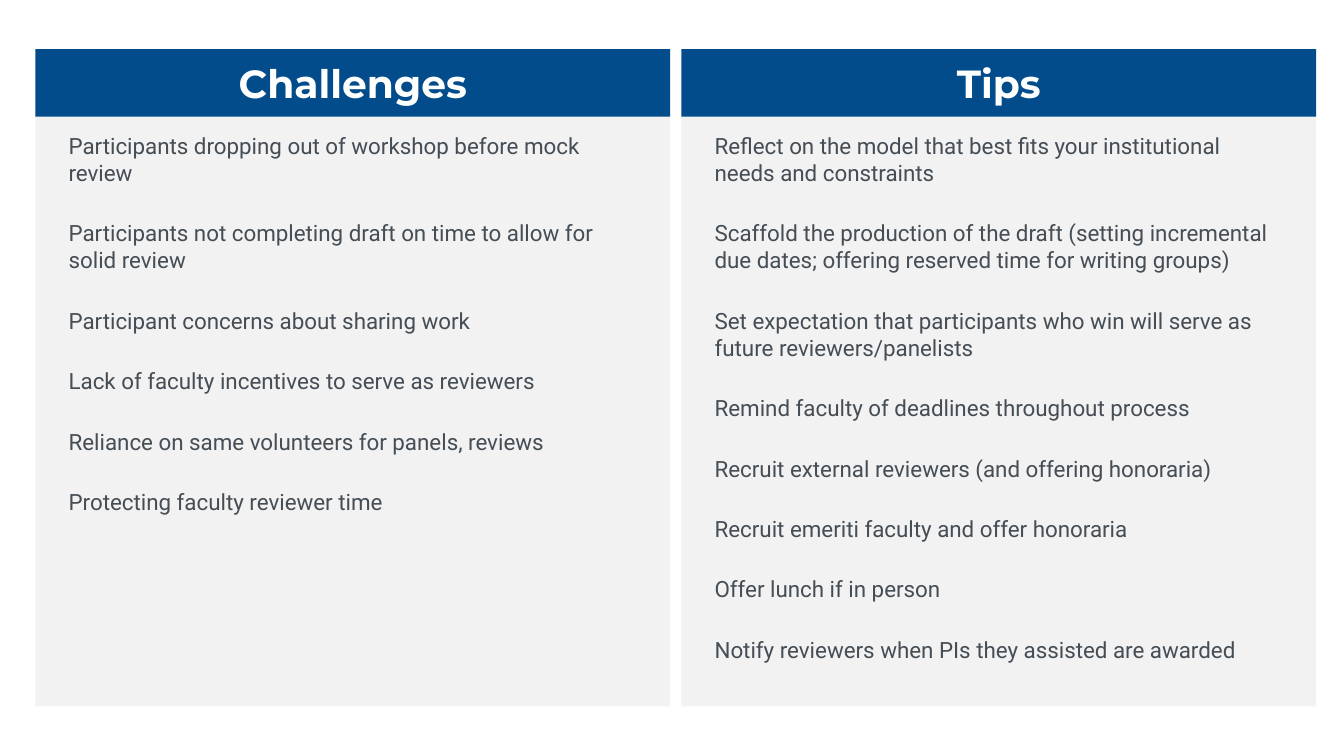
from pptx import Presentation
from pptx.dml.color import RGBColor
from pptx.enum.shapes import MSO_SHAPE
from pptx.enum.text import MSO_ANCHOR, PP_ALIGN
from pptx.util import Cm, Pt

RECTANGLE = MSO_SHAPE.RECTANGLE
TOP, MIDDLE = MSO_ANCHOR.TOP, MSO_ANCHOR.MIDDLE
LEFT, CENTER = PP_ALIGN.LEFT, PP_ALIGN.CENTER

BLUE, LIGHT_GRAY, DARK_GRAY, WHITE = "034C8B", "F2F2F2", "454D55", "FFFFFF"

# Column layout in centimetres
COLUMN_LEFT, COLUMN_TOP = 0.89, 1.24
COLUMN_WIDTH, COLUMN_HEIGHT = 16, 16.56
COLUMN_STEP = 16.28
HEADER_HEIGHT, BODY_OFFSET = 1.7, 1.58

COLUMNS = [
    ("Challenges", [
        "Participants dropping out of workshop before mock review",
        "Participants not completing draft on time to allow for solid review",
        "Participant concerns about sharing work",
        "Lack of faculty incentives to serve as reviewers",
        "Reliance on same volunteers for panels, reviews",
        "Protecting faculty reviewer time",
    ]),
    ("Tips", [
        "Reflect on the model that best fits your institutional needs and constraints",
        "Scaffold the production of the draft (setting incremental due dates; "
        "offering reserved time for writing groups)",
        "Set expectation that participants who win will serve as future reviewers/panelists",
        "Remind faculty of deadlines throughout process",
        "Recruit external reviewers (and offering honoraria)",
        "Recruit emeriti faculty and offer honoraria",
        "Offer lunch if in person",
        "Notify reviewers when PIs they assisted are awarded",
    ]),
]


def color(hex_string):
    return RGBColor.from_string(hex_string)


def add_panel(group, left, top, width, height, fill):
    shape = group.shapes.add_shape(RECTANGLE, Cm(left), Cm(top), Cm(width), Cm(height))
    shape.shadow.inherit = False
    shape.fill.solid()
    shape.fill.fore_color.rgb = color(fill)
    shape.line.fill.background()
    return shape


def write_text(shape, lines, *, font, size, text_color, bold=False, align=LEFT,
               anchor=TOP, inset=(0.25, 0.13), gap=0, indent=0):
    frame = shape.text_frame
    frame.word_wrap = True
    frame.vertical_anchor = anchor
    frame.margin_left = frame.margin_right = Cm(inset[0])
    frame.margin_top = frame.margin_bottom = Cm(inset[1])
    for index, line in enumerate(lines):
        paragraph = frame.add_paragraph() if index else frame.paragraphs[0]
        paragraph.alignment = align
        if index:
            paragraph.space_before = Pt(gap)
        if indent:
            paragraph_format = paragraph._p.get_or_add_pPr()
            paragraph_format.set("marL", str(Cm(indent)))
            paragraph_format.set("indent", "0")
        run = paragraph.add_run()
        run.text = line
        run.font.name = font
        run.font.size = Pt(size)
        run.font.bold = bold
        run.font.color.rgb = color(text_color)


def add_column(slide, left, top, width, height, title, points):
    group = slide.shapes.add_group_shape()
    # Body panel with the list of points
    body = add_panel(group, left, top + BODY_OFFSET, width, height - BODY_OFFSET, LIGHT_GRAY)
    write_text(body, points, font="Roboto", size=16, text_color=DARK_GRAY,
               inset=(0.76, 0.51), gap=24, indent=0.08)
    # Header bar
    header = add_panel(group, left, top, width, HEADER_HEIGHT, BLUE)
    write_text(header, [title], font="Montserrat", size=28, text_color=WHITE,
               bold=True, align=CENTER, anchor=MIDDLE)


def main():
    presentation = Presentation()
    presentation.slide_width, presentation.slide_height = Cm(33.87), Cm(19.05)
    slide = presentation.slides.add_slide(presentation.slide_layouts[6])
    for index, (title, points) in enumerate(COLUMNS):
        add_column(slide, COLUMN_LEFT + index * COLUMN_STEP, COLUMN_TOP,
                   COLUMN_WIDTH, COLUMN_HEIGHT, title, points)
    presentation.save("out.pptx")


if __name__ == "__main__":
    main()
